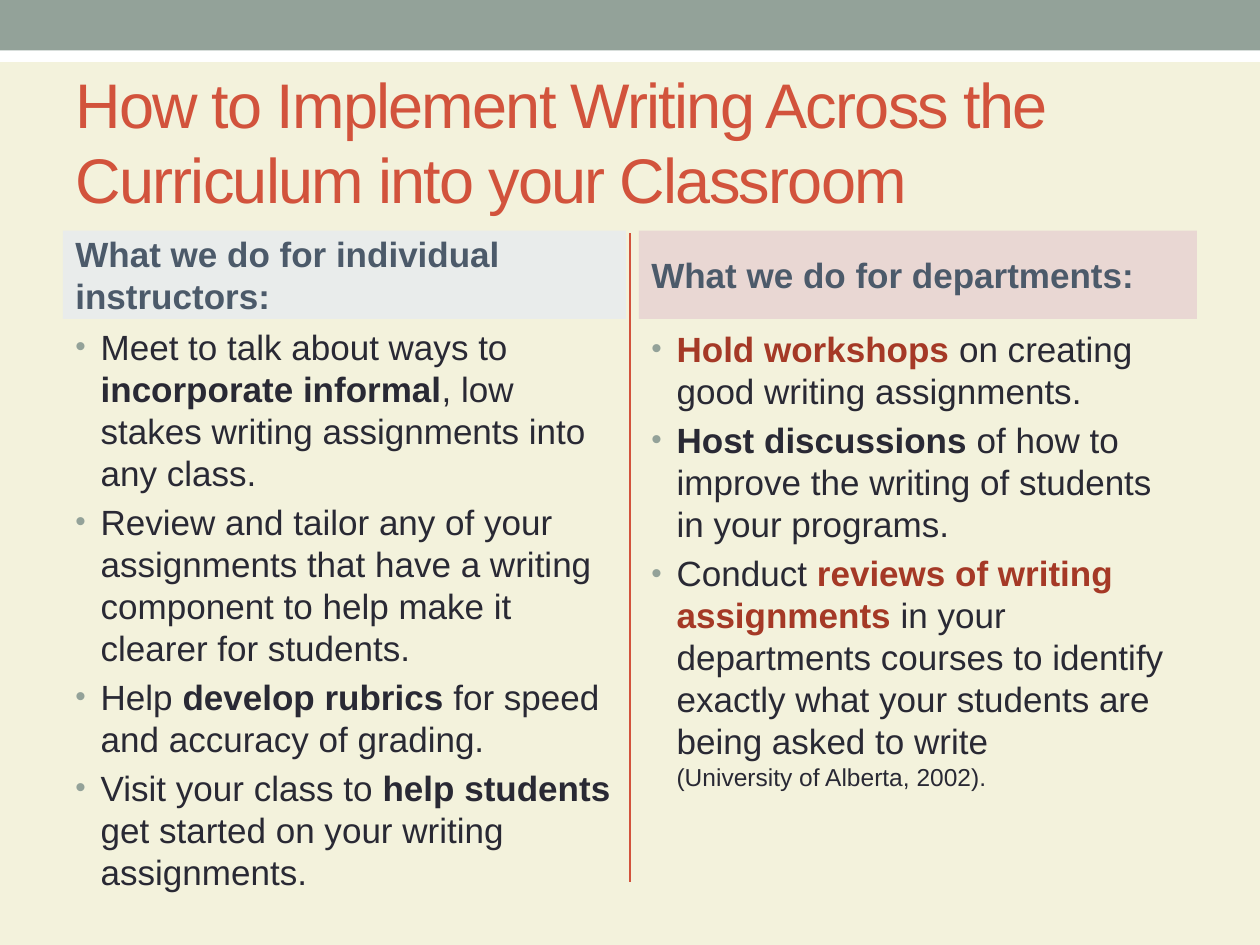
"""Build the slide on bringing writing across the curriculum into the classroom."""
from dataclasses import dataclass

import lxml.etree
import pptx
import pptx.dml.color
import pptx.enum.shapes
import pptx.enum.text
import pptx.oxml.ns
import pptx.util

Cm = pptx.util.Cm
Pt = pptx.util.Pt
RGBColor = pptx.dml.color.RGBColor
MIDDLE = pptx.enum.text.MSO_ANCHOR.MIDDLE
RECTANGLE = pptx.enum.shapes.MSO_SHAPE.RECTANGLE
STRAIGHT = pptx.enum.shapes.MSO_CONNECTOR.STRAIGHT

CREAM = RGBColor(0xF3, 0xF2, 0xDC)
WHITE = RGBColor(0xFF, 0xFF, 0xFF)
SAGE = RGBColor(0x93, 0xA2, 0x99)
ORANGE = RGBColor(0xD2, 0x53, 0x3C)
SLATE = RGBColor(0x4C, 0x5A, 0x6A)
INK = RGBColor(0x29, 0x29, 0x34)
BRICK = RGBColor(0xA5, 0x39, 0x26)
PALE_GRAY = RGBColor(0xE9, 0xEC, 0xEB)
PALE_ROSE = RGBColor(0xE9, 0xD7, 0xD3)

FONT = "Arial"
HEADING_TOP = Cm(4.65)
HEADING_HEIGHT = Cm(1.78)
BULLET_INDENT = Cm(0.51)


@dataclass(frozen=True)
class Span:
    text: str
    bold: bool = False
    color: RGBColor = INK
    size: float = 20
    new_line: bool = False


@dataclass(frozen=True)
class Column:
    left: float
    width: float
    body_top: float
    body_height: float
    heading: str
    heading_fill: RGBColor
    bullets: tuple[tuple[Span, ...], ...]


COLUMNS = (
    Column(
        1.27, 11.35, 6.43, 11.84, "What we do for individual instructors:", PALE_GRAY,
        (
            (
                Span("Meet to talk about ways to "),
                Span("incorporate informal", bold=True),
                Span(", low stakes writing assignments into any class."),
            ),
            (
                Span("Review and tailor any of your assignments that have a "
                     "writing component to help make it clearer for students."),
            ),
            (
                Span("Help "),
                Span("develop rubrics ", bold=True),
                Span("for speed and accuracy of grading."),
            ),
            (
                Span("Visit your class to "),
                Span("help students ", bold=True),
                Span("get started on your writing assignments."),
            ),
        ),
    ),
    Column(
        12.88, 11.25, 6.48, 12.32, "What we do for departments:", PALE_ROSE,
        (
            (
                Span("Hold workshops ", bold=True, color=BRICK),
                Span("on creating good writing assignments."),
            ),
            (
                Span("Host discussions ", bold=True),
                Span("of how to improve the writing of students in your programs."),
            ),
            (
                Span("Conduct "),
                Span("reviews of writing assignments ", bold=True, color=BRICK),
                Span("in your departments courses to identify exactly what "
                     "your students are being asked to write "),
                Span("(University of Alberta, 2002).", size=14, new_line=True),
            ),
        ),
    ),
)


def add_span(paragraph, span: Span):
    if span.new_line:
        paragraph.add_line_break()
    run = paragraph.add_run()
    run.text = span.text
    run.font.name = FONT
    run.font.size = Pt(span.size)
    run.font.bold = span.bold
    run.font.color.rgb = span.color
    return run


def add_rectangle(slide, left, top, width, height, fill: RGBColor):
    shape = slide.shapes.add_shape(RECTANGLE, left, top, width, height)
    shape.shadow.inherit = False
    shape.fill.solid()
    shape.fill.fore_color.rgb = fill
    shape.line.fill.background()
    return shape


def add_text_box(slide, left, top, width, height):
    text_frame = slide.shapes.add_textbox(left, top, width, height).text_frame
    text_frame.word_wrap = True
    return text_frame


def add_bullet(paragraph) -> None:
    properties = paragraph._p.get_or_add_pPr()
    properties.set("marL", str(BULLET_INDENT))
    properties.set("indent", str(-BULLET_INDENT))
    qualified = pptx.oxml.ns.qn
    color = lxml.etree.SubElement(properties, qualified("a:buClr"))
    lxml.etree.SubElement(color, qualified("a:srgbClr"), val=str(SAGE))
    lxml.etree.SubElement(properties, qualified("a:buSzPct"), val="85000")
    lxml.etree.SubElement(properties, qualified("a:buFont"), typeface=FONT)
    lxml.etree.SubElement(properties, qualified("a:buChar"), char="•")


def add_title(slide) -> None:
    text_frame = add_text_box(slide, Cm(1.27), Cm(1.47), Cm(22.86), Cm(2.74))
    text_frame.vertical_anchor = MIDDLE
    title = Span("How to Implement Writing Across the Curriculum into your Classroom",
                 color=ORANGE, size=36)
    run = add_span(text_frame.paragraphs[0], title)
    run.font._element.set("spc", "-100")


def add_divider(slide) -> None:
    divider = slide.shapes.add_connector(STRAIGHT, Cm(12.7), Cm(4.7), Cm(12.7), Cm(17.78))
    divider.line.color.rgb = ORANGE
    divider.line.width = Pt(1.5)
    lxml.etree.SubElement(divider._element.spPr, pptx.oxml.ns.qn("a:effectLst"))


def add_column(slide, column: Column) -> None:
    left, width = Cm(column.left), Cm(column.width)
    heading = add_rectangle(slide, left, HEADING_TOP, width, HEADING_HEIGHT,
                            column.heading_fill).text_frame
    heading.word_wrap = True
    heading.vertical_anchor = MIDDLE
    heading.paragraphs[0].alignment = pptx.enum.text.PP_ALIGN.LEFT
    add_span(heading.paragraphs[0], Span(column.heading, bold=True, color=SLATE))

    body = add_text_box(slide, left, Cm(column.body_top), width, Cm(column.body_height))
    for index, spans in enumerate(column.bullets):
        paragraph = body.add_paragraph() if index else body.paragraphs[0]
        add_bullet(paragraph)
        if index:
            paragraph.space_before = Pt(4)
        for span in spans:
            add_span(paragraph, span)


def main() -> None:
    presentation = pptx.Presentation()
    presentation.slide_width = Cm(25.4)
    presentation.slide_height = Cm(19.05)
    slide = presentation.slides.add_slide(presentation.slide_layouts[6])
    slide.background.fill.solid()
    slide.background.fill.fore_color.rgb = CREAM

    add_rectangle(slide, 0, Cm(0.61), presentation.slide_width, Cm(0.64), WHITE)
    add_rectangle(slide, 0, 0, presentation.slide_width, Cm(1.02), SAGE)
    add_divider(slide)
    add_title(slide)
    for column in COLUMNS:
        add_column(slide, column)
    presentation.save("out.pptx")


if __name__ == "__main__":
    main()
